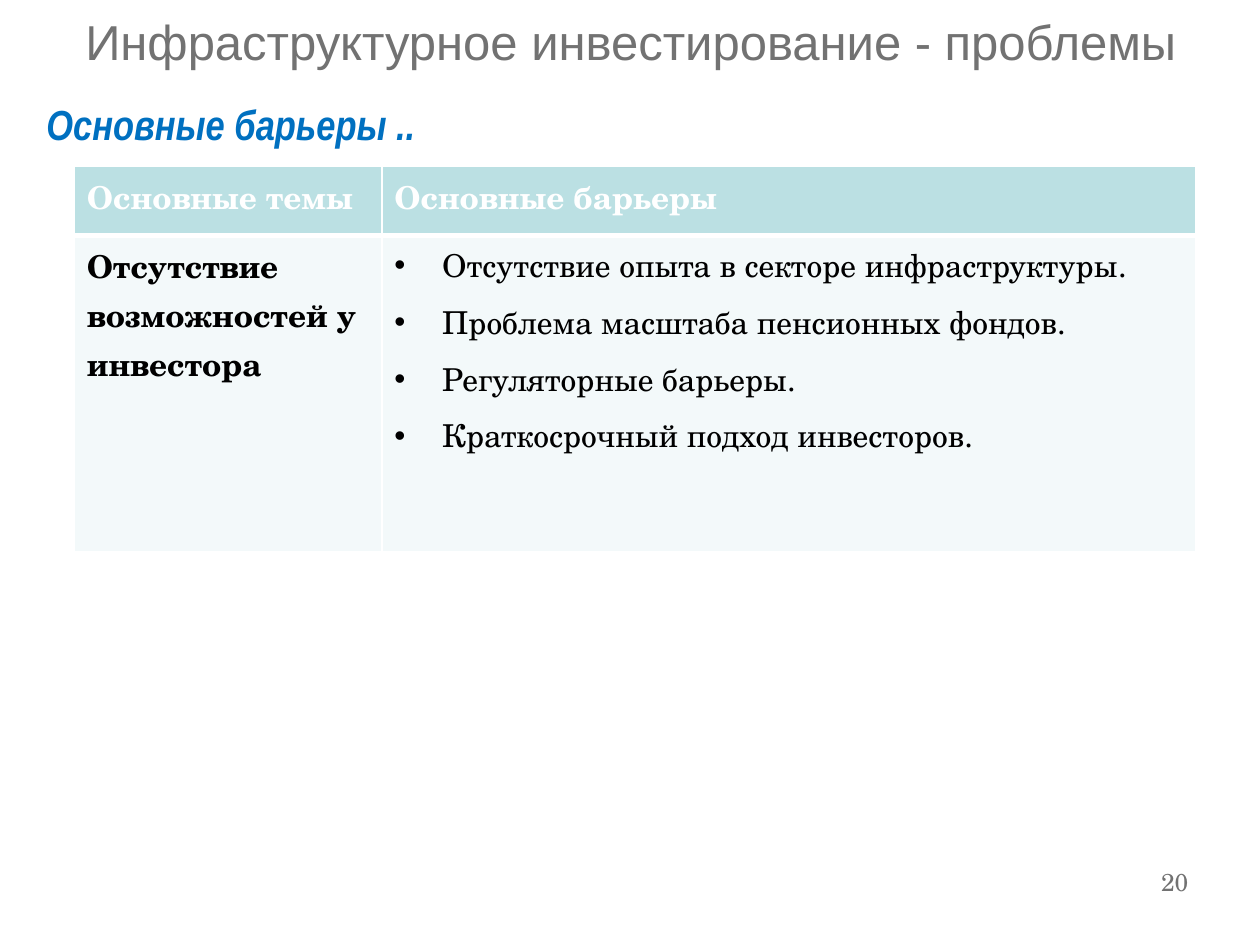
from dataclasses import dataclass

from pptx import Presentation
from pptx.dml.color import RGBColor
from pptx.enum.text import MSO_ANCHOR, PP_ALIGN
from pptx.oxml.ns import qn
from pptx.util import Inches, Pt
from lxml.etree import SubElement

GRAY = RGBColor(0x72, 0x72, 0x72)
BLUE = RGBColor(0x00, 0x70, 0xC0)
BLACK = RGBColor(0x00, 0x00, 0x00)
WHITE = RGBColor(0xFF, 0xFF, 0xFF)
TEAL = RGBColor(0xBB, 0xE0, 0xE3)
PALE = RGBColor(0xF3, 0xF9, 0xFA)
SERIF = "TeX Gyre Schola"


@dataclass
class Label:
    text: str
    box: tuple
    style: dict
    align: PP_ALIGN = PP_ALIGN.LEFT


@dataclass
class CellSpec:
    lines: list
    fill: RGBColor
    color: RGBColor
    bold: bool = True
    bullets: bool = False


def format_font(font, style: dict) -> None:
    for name, value in style.items():
        if name == "color":
            font.color.rgb = value
        else:
            setattr(font, name, value)


def write_label(s, label: Label) -> None:
    s.left, s.top, s.width, s.height = map(Inches, label.box)
    tf = s.text_frame
    tf.word_wrap = True
    p = tf.paragraphs[0]
    p.alignment = label.align
    r = p.add_run()
    r.text = label.text
    format_font(r.font, label.style)


def add_bullet(p) -> None:
    pPr = p._p.get_or_add_pPr()
    pPr.set("marL", str(Inches(0.38)))
    pPr.set("indent", str(-Inches(0.38)))
    SubElement(pPr, qn("a:buFont"), typeface="Arial")
    SubElement(pPr, qn("a:buChar"), char="•")
    tabs = SubElement(pPr, qn("a:tabLst"))
    for pos in (0.59, 0.83, 1.06):
        SubElement(tabs, qn("a:tab"), pos=str(Inches(pos)), algn="l")


def set_borders(cell, widths: dict) -> None:
    tcPr = cell._tc.get_or_add_tcPr()
    for i, (side, width) in enumerate(widths.items()):
        ln = tcPr.makeelement(qn(f"a:ln{side}"), {"w": str(Pt(width))})
        fill = SubElement(ln, qn("a:solidFill"))
        SubElement(fill, qn("a:srgbClr"), val=str(WHITE))
        tcPr.insert(i, ln)


def fill_cell(cell, spec: CellSpec) -> None:
    cell.fill.solid()
    cell.fill.fore_color.rgb = spec.fill
    tf = cell.text_frame
    for i, line in enumerate(spec.lines):
        p = tf.add_paragraph() if i else tf.paragraphs[0]
        if spec.bullets:
            add_bullet(p)
            p.alignment = PP_ALIGN.JUSTIFY
            if i:
                p.space_before = Pt(6)
        r = p.add_run()
        r.text = line
        format_font(r.font, dict(name=SERIF, size=Pt(18), bold=spec.bold,
                                 color=spec.color))


prs = Presentation()
prs.slide_width, prs.slide_height = Inches(10), Inches(7.5)
slide = prs.slides.add_slide(prs.slide_layouts[5])

# Title
title = slide.shapes.title
write_label(title, Label(
    "Инфраструктурное инвестирование - проблемы", (0.51, 0, 8.99, 0.71),
    dict(name="Arial", size=Pt(28), color=GRAY), PP_ALIGN.CENTER))
title.text_frame.vertical_anchor = MSO_ANCHOR.MIDDLE
title.text_frame.margin_bottom = Inches(0.11)

# Page number and subtitle
LABELS = [
    Label("20", (8.31, 6.83, 1.22, 0.52),
          dict(name=SERIF, size=Pt(14), color=GRAY), PP_ALIGN.RIGHT),
    Label("Основные барьеры ..", (0.27, 0.73, 8.43, 0.51),
          dict(name="Arial Narrow", size=Pt(24), bold=True, italic=True,
               color=BLUE)),
]
for label in LABELS:
    write_label(slide.shapes.add_textbox(0, 0, 0, 0), label)

# Table of barriers
ROWS = [
    [CellSpec(["Основные темы"], TEAL, WHITE),
     CellSpec(["Основные барьеры"], TEAL, WHITE)],
    [CellSpec(["Отсутствие возможностей у инвестора"], PALE, BLACK),
     CellSpec(["Отсутствие опыта в секторе инфраструктуры.",
               "Проблема масштаба пенсионных фондов.",
               "Регуляторные барьеры.",
               "Краткосрочный подход инвесторов."],
              PALE, BLACK, bold=False, bullets=True)],
]
BORDERS = [dict(L=1, R=1, T=1, B=3), dict(L=1, R=1, T=3, B=1)]
table = slide.shapes.add_table(2, 2, Inches(0.59), Inches(1.32),
                               Inches(8.9), Inches(3.06)).table
for column, width in zip(table.columns, (2.44, 6.46)):
    column.width = Inches(width)
for row, height, specs, borders in zip(table.rows, (0.55, 2.51), ROWS, BORDERS):
    row.height = Inches(height)
    for cell, spec in zip(row.cells, specs):
        fill_cell(cell, spec)
        set_borders(cell, borders)

prs.save("out.pptx")
